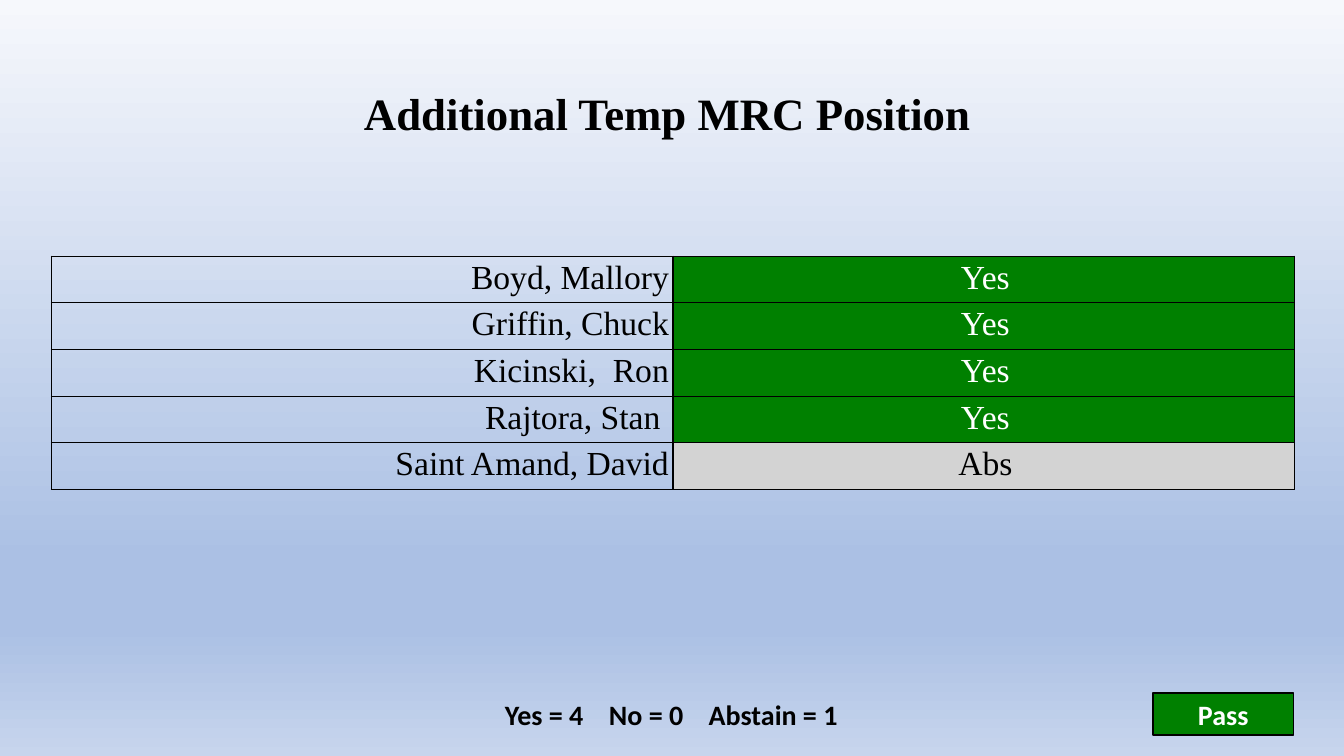
from dataclasses import dataclass

from lxml.etree import SubElement
from pptx import Presentation
from pptx.dml.color import RGBColor
from pptx.enum.shapes import MSO_SHAPE as Shape
from pptx.enum.text import MSO_ANCHOR as Anchor, PP_ALIGN as Align
from pptx.oxml import parse_xml
from pptx.oxml.ns import nsdecls, qn
from pptx.util import Pt

PX = 9525  # EMU per px, 96 px to the inch


@dataclass(frozen=True)
class Theme:
    black: str = "000000"
    white: str = "FFFFFF"
    green: str = "008000"
    gray: str = "D3D3D3"
    sky: tuple = ((0, "F6F8FC"), (74, "ABC0E4"), (83, "ABC0E4"), (100, "C7D5ED"))
    serif: str = "Times New Roman"
    sans: str = "Calibri"
    title_size: int = 32
    vote_size: int = 24
    footer_size: int = 20


@dataclass(frozen=True)
class Box:
    left: int
    top: int
    width: int
    height: int

    def emu(self) -> tuple:
        return tuple(n * PX for n in (self.left, self.top, self.width, self.height))


@dataclass(frozen=True)
class Vote:
    member: str
    choice: str


@dataclass(frozen=True)
class TextStyle:
    font: str
    size: int
    color: str
    bold: bool = False
    align: Align = Align.CENTER


THEME = Theme()
VOTES = (
    Vote("Boyd, Mallory", "Yes"),
    Vote("Griffin, Chuck", "Yes"),
    Vote("Kicinski,  Ron", "Yes"),
    Vote("Rajtora, Stan ", "Yes"),
    Vote("Saint Amand, David", "Abs"),
)
CHOICE_COLORS = {
    "Yes": (THEME.green, THEME.white),
    "Abs": (THEME.gray, THEME.black),
}
TALLY = ("Yes = 4", "No = 0", "Abstain = 1")

TITLE_BOX = Box(49, 20, 1184, 175)
TABLE_BOX = Box(49, 244, 1184, 215)
TALLY_BOX = Box(195, 660, 891, 40)
RESULT_BOX = Box(1098, 660, 134, 40)
TALLY_INDENT = 286
TALLY_STOPS = (99, 194)


def rgb(color: str) -> RGBColor:
    return RGBColor.from_string(color)


def write(frame, text: str, style: TextStyle) -> None:
    frame.text = text
    para = frame.paragraphs[0]
    para.alignment = style.align
    for span in para.runs:
        span.font.name = style.font
        span.font.size = Pt(style.size)
        span.font.bold = style.bold
        span.font.color.rgb = rgb(style.color)


def paint_background(page) -> None:
    fill = page.background.fill
    fill.gradient()
    fill.gradient_angle = 270
    stops = next(page.element.iter(qn("a:gsLst")))
    for stop in list(stops):
        stops.remove(stop)
    for percent, color in THEME.sky:
        stop = SubElement(stops, qn("a:gs"), pos=str(percent * 1000))
        SubElement(stop, qn("a:srgbClr"), val=color)


def add_text(page, box: Box, text: str, style: TextStyle):
    frame = page.shapes.add_textbox(*box.emu()).text_frame
    frame.word_wrap = True
    frame.vertical_anchor = Anchor.MIDDLE
    write(frame, text, style)
    return frame


def add_tally(page) -> None:
    """Vote counts on one line, spaced by tab stops."""
    style = TextStyle(THEME.sans, THEME.footer_size, THEME.black, True, Align.LEFT)
    frame = add_text(page, TALLY_BOX, "\t".join(TALLY), style)
    frame.margin_left = TALLY_INDENT * PX
    stops = SubElement(frame.paragraphs[0]._p.get_or_add_pPr(), qn("a:tabLst"))
    for stop in TALLY_STOPS:
        SubElement(stops, qn("a:tab"), pos=str(stop * PX), algn="l")


def add_result(page) -> None:
    badge = page.shapes.add_shape(Shape.RECTANGLE, *RESULT_BOX.emu())
    badge.shadow.inherit = False
    badge.fill.solid()
    badge.fill.fore_color.rgb = rgb(THEME.green)
    badge.line.color.rgb = rgb(THEME.black)
    badge.line.width = Pt(1)
    badge.text_frame.word_wrap = False
    badge.text_frame.vertical_anchor = Anchor.MIDDLE
    write(badge.text_frame, "Pass",
          TextStyle(THEME.sans, THEME.footer_size, THEME.white, True))


def outline(cell) -> None:
    properties = cell._tc.get_or_add_tcPr()
    for index, side in enumerate(("lnL", "lnR", "lnT", "lnB")):
        properties.insert(index, parse_xml(
            f'<a:{side} {nsdecls("a")} w="{Pt(1)}"><a:solidFill>'
            f'<a:srgbClr val="{THEME.black}"/></a:solidFill></a:{side}>'))


def fill_cell(cell, text: str, style: TextStyle, fill: str | None) -> None:
    cell.margin_left = 7 * PX
    cell.margin_right = 4 * PX
    cell.margin_top = cell.margin_bottom = 3 * PX
    write(cell.text_frame, text, style)
    if fill:
        cell.fill.solid()
        cell.fill.fore_color.rgb = rgb(fill)
    else:
        cell.fill.background()
    outline(cell)


def add_votes(page) -> None:
    table = page.shapes.add_table(len(VOTES), 2, *TABLE_BOX.emu()).table
    table.first_row = table.horz_banding = False
    member_style = TextStyle(THEME.serif, THEME.vote_size, THEME.black, align=Align.RIGHT)
    for row, vote in enumerate(VOTES):
        fill, color = CHOICE_COLORS[vote.choice]
        choice_style = TextStyle(THEME.serif, THEME.vote_size, color)
        fill_cell(table.cell(row, 0), vote.member, member_style, None)
        fill_cell(table.cell(row, 1), vote.choice, choice_style, fill)


def main() -> None:
    deck = Presentation()
    deck.slide_width, deck.slide_height = 1280 * PX, 720 * PX
    page = deck.slides.add_slide(deck.slide_layouts[6])
    paint_background(page)
    add_text(page, TITLE_BOX, "Additional Temp MRC Position ",
             TextStyle(THEME.serif, THEME.title_size, THEME.black, True))
    add_result(page)
    add_tally(page)
    add_votes(page)
    deck.save("out.pptx")


if __name__ == "__main__":
    main()
